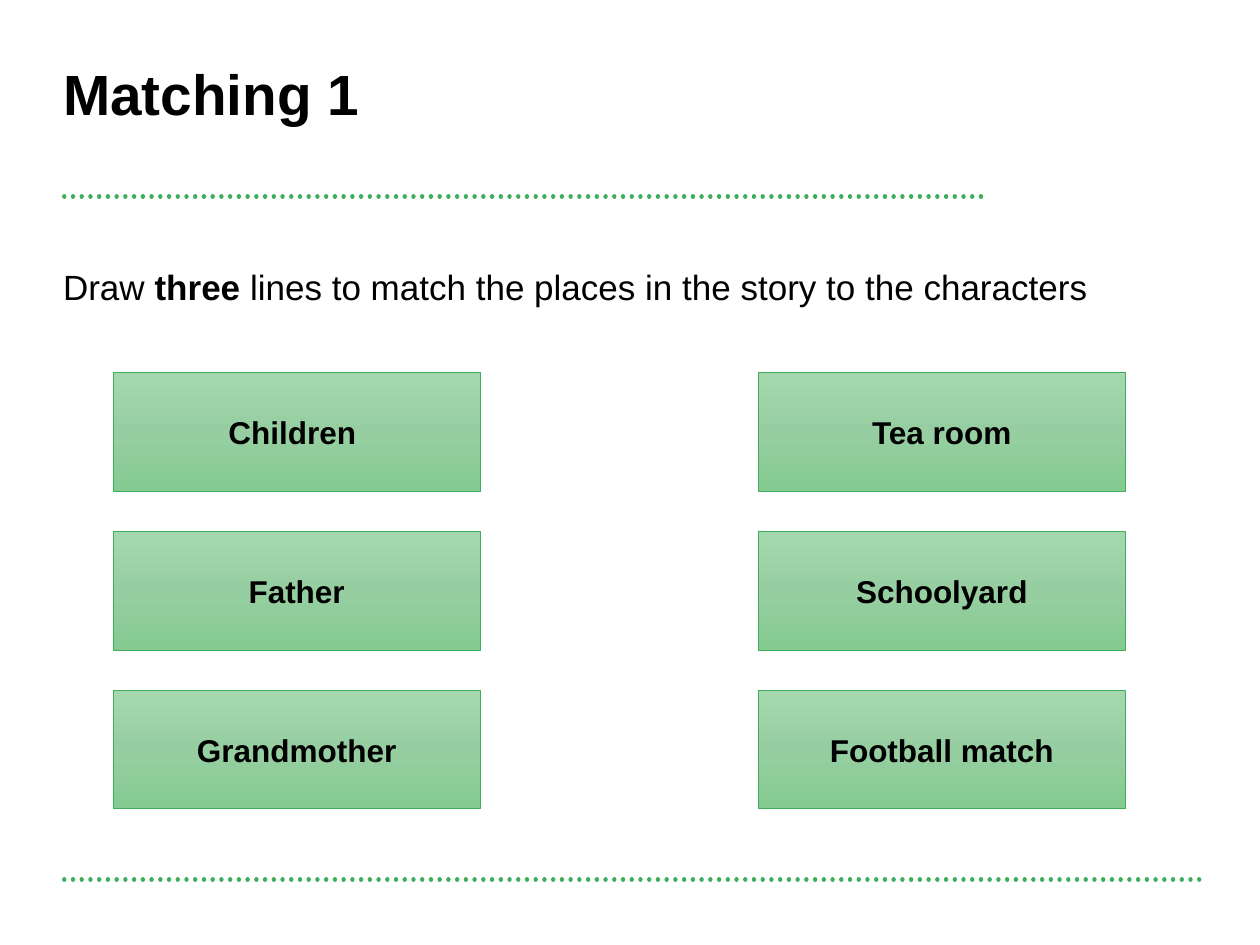
"""Build the story matching exercise slide."""
import copy

import pptx
import pptx.dml.color
import pptx.enum.dml
import pptx.enum.shapes
import pptx.enum.text
import pptx.oxml
import pptx.oxml.ns
import pptx.util

Inches = pptx.util.Inches
Pt = pptx.util.Pt
ANCHOR = pptx.enum.text.MSO_ANCHOR


def rgb(value):
    return pptx.dml.color.RGBColor.from_string(value)


class Deck:
    font = "Arial"
    ink = "000000"
    green = "3EAD5C"
    stops = [(0, "A4D7AD"), (0.5, "97CEA1"), (1, "84CA91")]

    def __init__(self, prs):
        self.s = prs.slides.add_slide(prs.slide_layouts[1])

    def run(self, p, text, size, bold=False):
        r = p.add_run()
        r.text = text
        r.font.name = self.font
        r.font.size = Pt(size)
        r.font.bold = bold
        r.font.color.rgb = rgb(self.ink)

    def placeholder(self, idx, box, runs, size, spacing, after=0):
        sp = self.s.placeholders[idx]
        sp.left, sp.top, sp.width, sp.height = map(Inches, box)
        tf = sp.text_frame
        tf.margin_left = tf.margin_top = tf.margin_right = tf.margin_bottom = 0
        tf.vertical_anchor = ANCHOR.TOP
        tf.auto_size = pptx.enum.text.MSO_AUTO_SIZE.NONE
        tf.word_wrap = True
        p = tf.paragraphs[0]
        pPr = p._p.get_or_add_pPr()
        pPr.set("marL", "0")
        pPr.set("indent", "0")
        pPr.append(pptx.oxml.parse_xml(
            f"<a:buNone {pptx.oxml.ns.nsdecls('a')}/>"))
        p.alignment = pptx.enum.text.PP_ALIGN.LEFT
        p.line_spacing = Pt(spacing)
        p.space_before = Pt(0)
        p.space_after = Pt(after)
        for text, bold in runs:
            self.run(p, text, size, bold)

    def rule(self, x1, x2, y):
        c = self.s.shapes.add_connector(
            pptx.enum.shapes.MSO_CONNECTOR.STRAIGHT,
            Inches(x1), Inches(y), Inches(x2), Inches(y))
        c.line.color.rgb = rgb(self.green)
        c.line.width = Pt(2.5)
        c.line.dash_style = pptx.enum.dml.MSO_LINE.ROUND_DOT
        spPr = c._element.spPr
        spPr.find(pptx.oxml.ns.qn("a:ln")).set("cap", "rnd")
        spPr.append(pptx.oxml.parse_xml(
            f"<a:effectLst {pptx.oxml.ns.nsdecls('a')}/>"))

    def card(self, x, y, w, h, text):
        sp = self.s.shapes.add_shape(
            pptx.enum.shapes.MSO_SHAPE.RECTANGLE,
            Inches(x), Inches(y), Inches(w), Inches(h))
        sp.shadow.inherit = False
        sp.fill.gradient()
        sp.fill.gradient_angle = 270
        first = sp._element.spPr.xpath(".//a:gs")[0]
        first.addnext(copy.deepcopy(first))
        for stop, (position, color) in zip(sp.fill.gradient_stops, self.stops):
            stop.position = position
            stop.color.rgb = rgb(color)
        sp.line.color.rgb = rgb(self.green)
        sp.line.width = Pt(0.5)
        tf = sp.text_frame
        tf.word_wrap = True
        tf.vertical_anchor = ANCHOR.MIDDLE
        p = tf.paragraphs[0]
        p.alignment = pptx.enum.text.PP_ALIGN.CENTER
        self.run(p, text, 18, True)


def main():
    prs = pptx.Presentation()
    prs.slide_width, prs.slide_height = Inches(10), Inches(7.5)
    deck = Deck(prs)
    deck.rule(0.51, 9.53, 6.98)
    deck.rule(0.51, 7.8, 1.56)
    deck.placeholder(0, (0.5, 0.52, 9, 0.93), [("Matching 1", True)], 32.4, 35)
    deck.placeholder(1, (0.5, 2.12, 9, 4.86), [
        ("Draw ", False),
        ("three", True),
        (" lines to match the places in the story to the characters", False),
    ], 20, 23, 12)
    columns = [
        (0.9, ["Children ", "Father", "Grandmother"]),
        (6.02, ["Tea room", "Schoolyard", "Football match"]),
    ]
    for x, labels in columns:
        for row, label in enumerate(labels):
            deck.card(x, 2.96 + 1.26 * row, 2.91, 0.94, label)
    prs.save("out.pptx")


if __name__ == "__main__":
    main()
